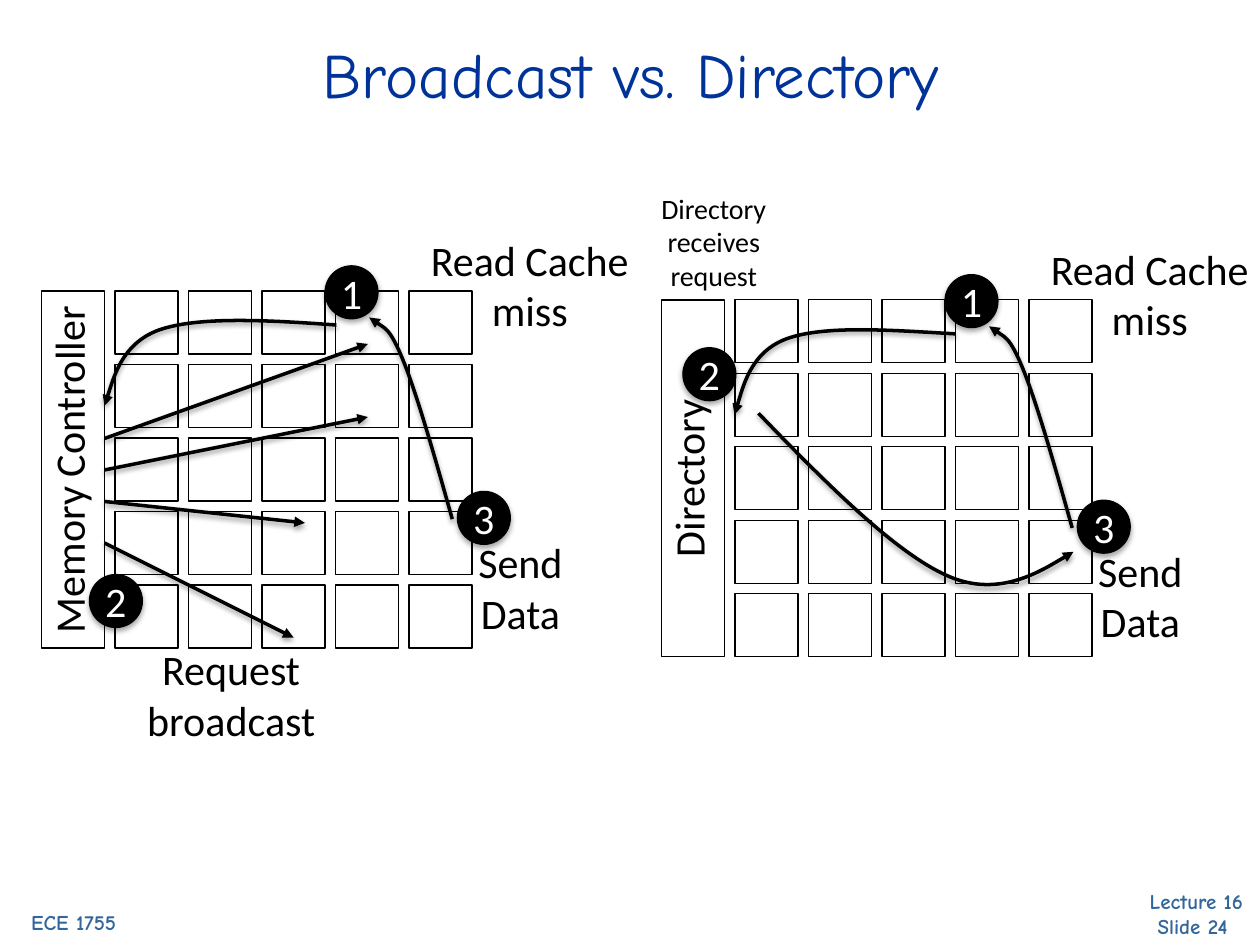
"""Build the slide comparing broadcast and directory coherence on a tiled chip."""
from pptx import Presentation
from pptx.dml.color import RGBColor
from pptx.enum.shapes import MSO_CONNECTOR, MSO_SHAPE
from pptx.enum.text import MSO_ANCHOR, MSO_AUTO_SIZE, PP_ALIGN
from pptx.oxml import parse_xml
from pptx.oxml.ns import nsdecls, qn
from pptx.util import Inches, Pt

RECTANGLE, OVAL = MSO_SHAPE.RECTANGLE, MSO_SHAPE.OVAL
STRAIGHT = MSO_CONNECTOR.STRAIGHT
MIDDLE, CENTER = MSO_ANCHOR.MIDDLE, PP_ALIGN.CENTER
NO_AUTOFIT = MSO_AUTO_SIZE.NONE

COLORS = {"ink": "000000", "white": "FFFFFF", "title": "003399", "footer": "336699"}
BODY_FONT, TITLE_FONT = "Calibri", "Comic Neue"
GRID_SIZE, CELL, PITCH = 5, 0.5, 7 / 12
BAR_HEIGHT = (GRID_SIZE - 1) * PITCH + CELL
BADGE = 0.42

BROADCAST_ORIGIN = (0.33, 2.31)
DIRECTORY_ORIGIN = (5.25, 2.38)
SEND_CURVE = [(3.26, 1.81), (3.12, 1.31), (2.98, 0.82), (2.87, 0.55),
              (2.76, 0.28), (2.6, 0.21), (2.6, 0.21)]
BROADCAST_MISS_CURVE = [(2.67, 2.58), (2.12, 2.54), (1.57, 2.51), (1.26, 2.62),
                        (0.96, 2.73), (0.83, 3.22), (0.83, 3.22)]
DIRECTORY_MISS_CURVE = [(7.58, 2.65), (7.06, 2.62), (6.54, 2.58), (6.24, 2.69),
                        (5.95, 2.8), (5.83, 3.29), (5.83, 3.29)]
FORWARD_CURVE = [(6.02, 3.28), (6.56, 3.84), (7.11, 4.39), (7.52, 4.57),
                 (7.94, 4.76), (8.52, 4.38), (8.52, 4.38)]
BROADCAST_ARROWS = [((0.83, 3.48), (2.92, 2.73)), ((0.83, 3.73), (2.92, 3.31)),
                    ((0.83, 3.98), (2.42, 4.15)), ((0.83, 4.31), (2.33, 5.06))]


def color(name):
    return RGBColor.from_string(COLORS[name])


def style_line(shape, width):
    shape.line.color.rgb = color("ink")
    shape.line.width = Pt(width)


def add_shadow(shape, opacity, distance):
    shape._element.spPr.append(parse_xml(
        f'<a:effectLst {nsdecls("a")}><a:outerShdw blurRad="{Pt(3.1)}" '
        f'dist="{Pt(distance)}" dir="5400000" rotWithShape="0">'
        f'<a:srgbClr val="{COLORS["ink"]}"><a:alpha val="{opacity * 1000}"/>'
        '</a:srgbClr></a:outerShdw></a:effectLst>'))


def style_arrow(shape):
    style_line(shape, 2)
    shape.line._get_or_add_ln().append(
        parse_xml(f'<a:tailEnd {nsdecls("a")} type="triangle"/>'))
    add_shadow(shape, 38, 1.6)


def write(shape, text, size, font_name, color_name, bold=False):
    paragraph = shape.text_frame.paragraphs[0]
    paragraph.text = text
    paragraph.alignment = CENTER
    font = paragraph.font
    font.size, font.name, font.bold = Pt(size), font_name, bold
    font.color.rgb = color(color_name)


def add_label(slide, text, left, top, width, height, size=24, font_name=BODY_FONT,
              color_name="ink", bold=False):
    box = slide.shapes.add_textbox(Inches(left), Inches(top), Inches(width), Inches(height))
    box.text_frame.word_wrap = True
    write(box, text, size, font_name, color_name, bold)
    return box


def add_box(slide, left, top, height=CELL):
    box = slide.shapes.add_shape(
        RECTANGLE, Inches(left), Inches(top), Inches(CELL), Inches(height))
    box.fill.background()
    style_line(box, 0.75)
    box.shadow.inherit = False


def add_badge(slide, number, left, top):
    badge = slide.shapes.add_shape(
        OVAL, Inches(left), Inches(top), Inches(BADGE), Inches(BADGE))
    badge.fill.solid()
    badge.fill.fore_color.rgb = color("ink")
    style_line(badge, 0.75)
    add_shadow(badge, 35, 1.8)
    badge.text_frame.word_wrap = False
    badge.text_frame.vertical_anchor = MIDDLE
    write(badge, number, 24, BODY_FONT, "white")


def add_arrow(slide, start, end):
    ends = [Inches(value) for value in (*start, *end)]
    style_arrow(slide.shapes.add_connector(STRAIGHT, *ends))


def add_curve(slide, points):
    """Draw an arrow through a start point followed by triples of Bézier points."""
    start, *others = [(Inches(x), Inches(y)) for x, y in points]
    builder = slide.shapes.build_freeform(*start)
    builder.add_line_segments(others, close=False)
    curve = builder.convert_to_shape()
    segments = list(curve._element.iter(qn("a:lnTo")))
    outline = segments[0].getparent()
    for first in range(0, len(segments), 3):
        bezier = parse_xml(f'<a:cubicBezTo {nsdecls("a")}/>')
        for segment in segments[first:first + 3]:
            bezier.append(segment[0])
            outline.remove(segment)
        outline.append(bezier)
    curve.fill.background()
    style_arrow(curve)


def add_panel(slide, origin, bar_text, miss_curve):
    """Draw the tile grid, side bar and the steps that both schemes share."""
    left, top = origin
    for row in range(GRID_SIZE):
        for column in range(1, GRID_SIZE + 1):
            add_box(slide, left + column * PITCH, top + row * PITCH)
    add_box(slide, left, top, BAR_HEIGHT)
    bar_label = add_label(slide, bar_text, left + (CELL - BAR_HEIGHT) / 2 - 0.04,
                          top + (BAR_HEIGHT - CELL) / 2, BAR_HEIGHT, CELL)
    bar_label.rotation = 270
    add_badge(slide, "1", left + 2.25, top - 0.2)
    add_label(slide, "Read Cache miss", left + 2.75, top - 0.5, 2.25, 0.91)
    add_curve(slide, miss_curve)
    add_badge(slide, "3", left + 3.3, top + 1.59)
    add_label(slide, "Send Data", left + 3.34, top + 1.9, 0.92, 0.91)
    add_curve(slide, [(left + x, top + y) for x, y in SEND_CURVE])


def add_title(slide, text):
    title = slide.shapes.title
    title.left, title.top = Inches(0.38), Inches(0.25)
    title.width, title.height = Inches(9.25), Inches(0.67)
    title.text_frame.auto_size = NO_AUTOFIT
    title.text_frame.vertical_anchor = MIDDLE
    write(title, text, 36, TITLE_FONT, "title")


def add_footer(slide, text, left, top, height):
    add_label(slide, text, left, top, 1.33, height, 12, TITLE_FONT, "footer", True)


def main():
    presentation = Presentation()
    presentation.slide_width, presentation.slide_height = Inches(10), Inches(7.5)
    slide = presentation.slides.add_slide(presentation.slide_layouts[5])
    add_footer(slide, "Lecture 16\vSlide 24 ", 8.83, 7, 0.5)
    add_footer(slide, "ECE 1755", -0.08, 7.17, 0.3)
    add_title(slide, "Broadcast vs. Directory")

    add_panel(slide, BROADCAST_ORIGIN, "Memory Controller", BROADCAST_MISS_CURVE)
    for start, end in BROADCAST_ARROWS:
        add_arrow(slide, start, end)
    add_badge(slide, "2", 0.71, 4.56)
    add_label(slide, "Request broadcast", 0.71, 5.06, 2.25, 0.91)

    add_panel(slide, DIRECTORY_ORIGIN, "Directory", DIRECTORY_MISS_CURVE)
    add_badge(slide, "2", 5.42, 2.76)
    add_label(slide, "Directory receives request", 5, 1.47, 1.33, 0.91, 16)
    add_curve(slide, FORWARD_CURVE)
    presentation.save("out.pptx")


if __name__ == "__main__":
    main()
